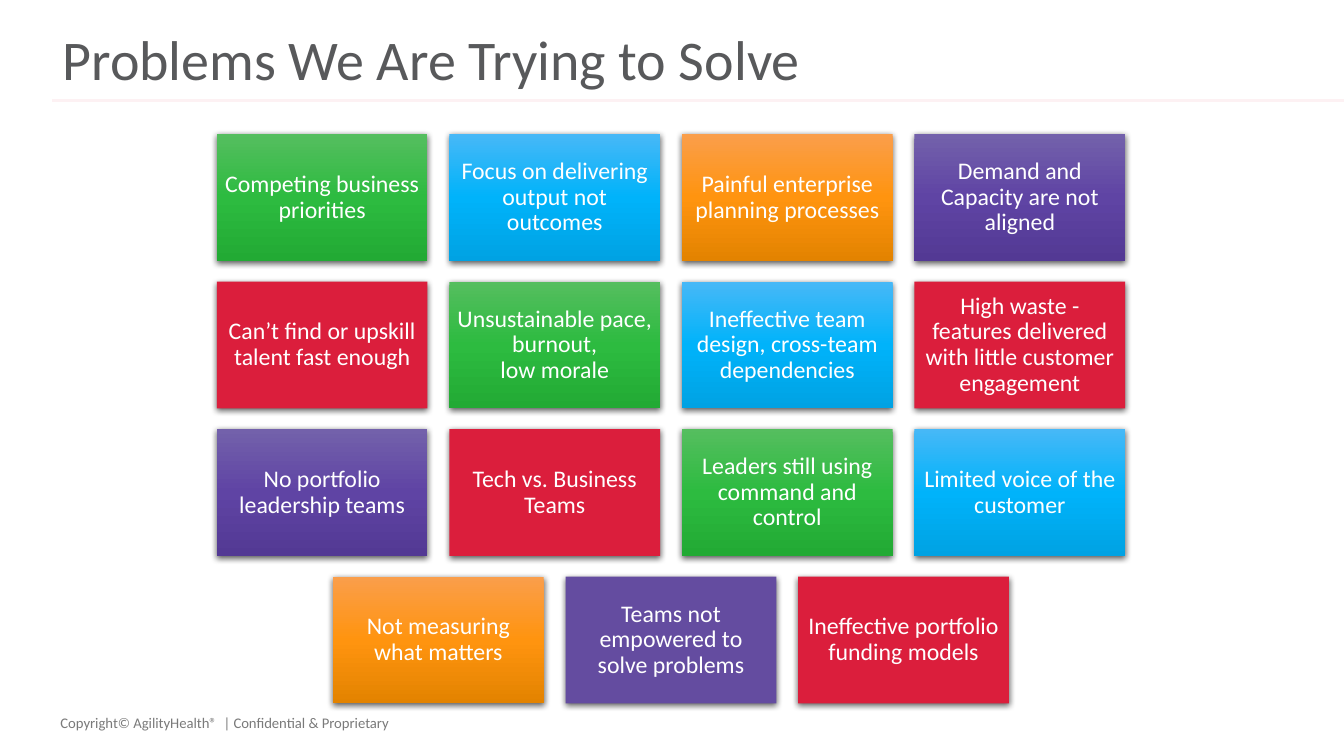
from lxml.etree import SubElement
from pptx import Presentation
from pptx.dml.color import RGBColor
from pptx.enum.shapes import MSO_CONNECTOR as Line, MSO_SHAPE as Shape
from pptx.enum.text import MSO_ANCHOR as Anchor, MSO_AUTO_SIZE as Fit, PP_ALIGN as Align
from pptx.oxml.ns import qn
from pptx.util import Pt

PX = 9144  # 100 px to the inch
WIDE, HIGH = 1333, 750

FILLS = {
    "green": ["55BE5F", "2DBB40", "22AA34"],
    "blue": ["47B8F7", "00B3FA", "00A2E3"],
    "orange": ["FA9E4B", "FF940F", "E38300"],
    "purple": ["7361AB", "5F44A4", "533994"],
    "violet": ["644CA0"],
    "red": ["DB1E3C"],
}

ROWS = [
    [("green", "Competing business priorities"),
     ("blue", "Focus on delivering output not outcomes"),
     ("orange", "Painful enterprise planning processes"),
     ("purple", "Demand and Capacity are not aligned")],
    [("red", "Can’t find or upskill talent fast enough"),
     ("green", "Unsustainable pace, burnout,\nlow morale"),
     ("blue", "Ineffective team design, cross-team dependencies"),
     ("red", "High waste - features delivered with little customer engagement")],
    [("purple", "No portfolio leadership teams"),
     ("red", "Tech vs. Business Teams"),
     ("green", "Leaders still using command and control"),
     ("blue", "Limited voice of the customer")],
    [("orange", "Not measuring what matters"),
     ("violet", "Teams not empowered to solve problems"),
     ("red", "Ineffective portfolio funding models")],
]


def px(*nums):
    return [round(n * PX) for n in nums]


def color(code):
    return RGBColor.from_string(code)


def write(shape, text, size, code, align, inset, space=1.0):
    """Put one paragraph in a shape; a newline becomes a line break."""
    frame = shape.text_frame
    frame.word_wrap = True
    frame.auto_size = Fit.NONE
    side, top = px(*inset)
    frame.margin_left = frame.margin_right = side
    frame.margin_top = frame.margin_bottom = top
    para = frame.paragraphs[0]
    para.alignment = align
    para.line_spacing = space
    for i, part in enumerate(text.split("\n")):
        if i:
            para.add_line_break()
        run = para.add_run()
        run.text = part
        run.font.size = Pt(size)
        run.font.name = "Calibri"
        run.font.color.rgb = color(code)
    return frame


def paint(shape, codes):
    """Fill with one colour, or with a top-down blend of several."""
    fill = shape.fill
    if len(codes) == 1:
        fill.solid()
        fill.fore_color.rgb = color(codes[0])
        return
    fill.gradient()
    fill.gradient_angle = 270
    stops = shape.element.spPr.find(".//" + qn("a:gsLst"))
    for old in list(stops):
        stops.remove(old)
    for i, code in enumerate(codes):
        pos = 100000 * i // (len(codes) - 1)
        stop = SubElement(stops, qn("a:gs"), pos=str(pos))
        SubElement(stop, qn("a:srgbClr"), val=code)


def shade(shape):
    """Add a soft black shadow below a shape."""
    shape.shadow.inherit = False
    effects = shape.element.spPr.find(qn("a:effectLst"))
    drop = SubElement(effects, qn("a:outerShdw"), blurRad=str(Pt(4.5)),
                      dist=str(Pt(1.5)), dir="5400000", algn="ctr", rotWithShape="0")
    black = SubElement(drop, qn("a:srgbClr"), val="000000")
    SubElement(black, qn("a:alpha"), val="63000")


def header(slide, left, top, width, height):
    rule = slide.shapes.add_connector(
        Line.STRAIGHT, *px(left, top + height + 3, WIDE, top + height + 3))
    rule.line.color.rgb = color("FDF1F3")
    rule.line.width = Pt(2)
    SubElement(rule.element.spPr, qn("a:effectLst"))
    title = slide.shapes.title
    title.left, title.top, title.width, title.height = px(left, top, width, height)
    frame = write(title, "Problems We Are Trying to Solve", 40, "58595B",
                  Align.LEFT, (10, 5), 0.9)
    frame.vertical_anchor = Anchor.MIDDLE


def card(slide, hue, text, left, top, width, height):
    box = slide.shapes.add_shape(Shape.RECTANGLE, *px(left, top, width, height))
    paint(box, FILLS[hue])
    box.line.fill.background()
    shade(box)
    frame = write(box, text, 17, "FFFFFF", Align.CENTER, (7, 7), 0.9)
    frame.vertical_anchor = Anchor.MIDDLE


def grid(slide, left, top, width, height):
    """Lay out the rows of cards, centring any short row."""
    wide, high = 209, 126
    cols = max(map(len, ROWS))
    across = (width - wide) / (cols - 1)
    down = (height - high) / (len(ROWS) - 1)
    for r, row in enumerate(ROWS):
        start = left + (cols - len(row)) * across / 2
        for c, (hue, text) in enumerate(row):
            card(slide, hue, text, start + c * across, top + r * down, wide, high)


def footer(slide, left, top, width, height):
    box = slide.shapes.add_textbox(*px(left, top, width, height))
    write(box, "Copyright© AgilityHealth®  | Confidential & Proprietary",
          10.5, "7A7A7A", Align.LEFT, (0, 0))


def main():
    deck = Presentation()
    deck.slide_width, deck.slide_height = px(WIDE, HIGH)
    slide = deck.slides.add_slide(deck.slide_layouts[5])
    header(slide, 52, 27, 1229, 70)
    footer(slide, 60, 708, 450, 28)
    grid(slide, 215, 133, 901, 565)
    deck.save("out.pptx")


if __name__ == "__main__":
    main()
